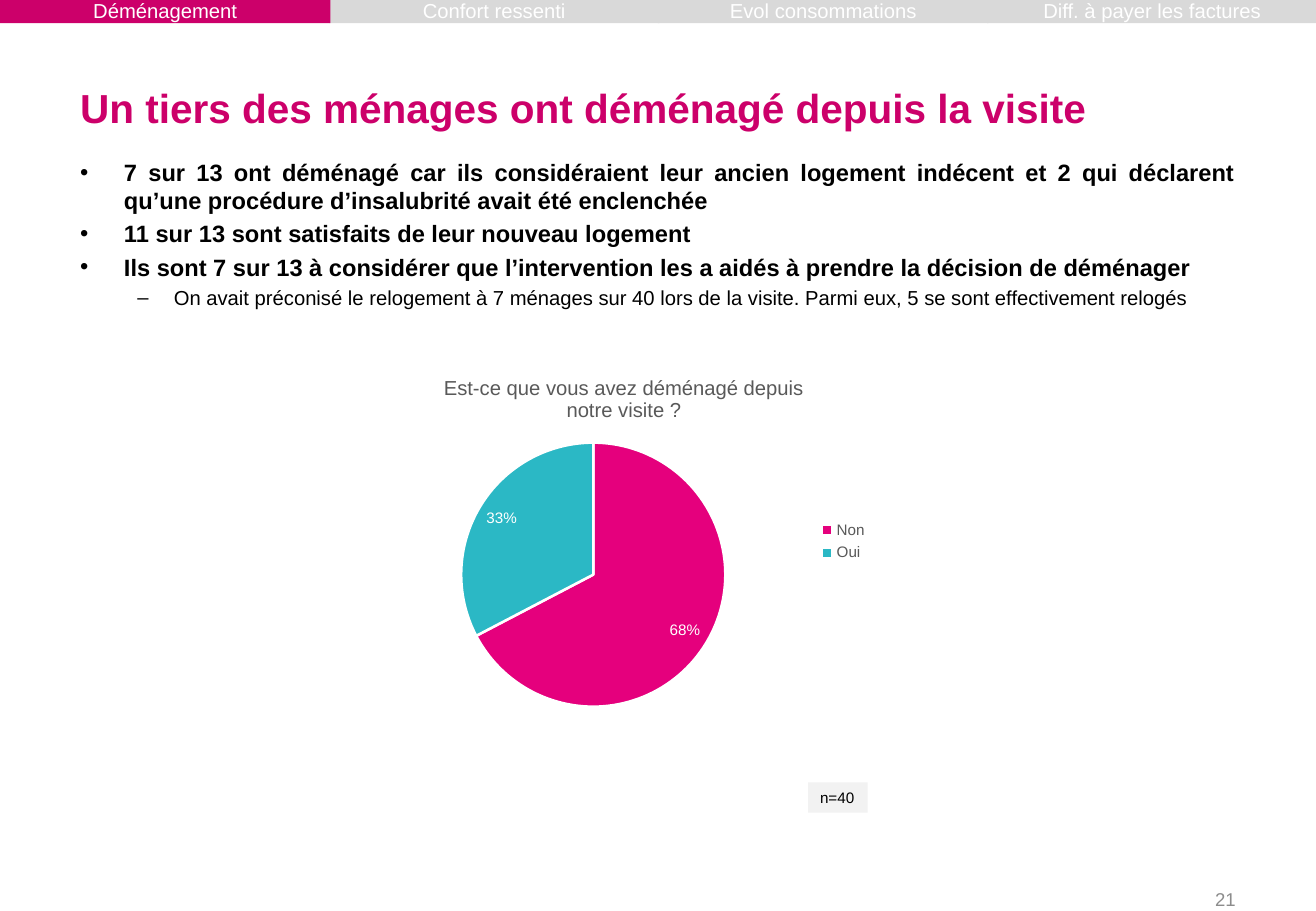
from dataclasses import dataclass

from lxml import etree
from pptx import Presentation
from pptx import util as u
from pptx.chart.chart import Chart
from pptx.chart.data import CategoryChartData
from pptx.dml.color import RGBColor
from pptx.enum import chart as charts
from pptx.enum import shapes, text
from pptx.oxml import ns
from pptx.slide import Slide

FONT = "Arial"
MAGENTA, GREY, WHITE, BLACK = "CC006A", "D9D9D9", "FFFFFF", "000000"
SLIDE_WIDTH = 10.83
BODY_LEFT, BODY_WIDTH = 0.54, 9.75


@dataclass
class Tab:
    label: str
    color: str = GREY


@dataclass
class Bullet:
    text: str
    level: int = 0


@dataclass
class LevelStyle:
    size: float
    bold: bool
    margin: float
    indent: float


@dataclass
class Answer:
    label: str
    percent: int
    color: str


TABS = [
    Tab("Déménagement", MAGENTA),
    Tab("Confort ressenti"),
    Tab("Evol consommations"),
    Tab("Diff. à payer les factures"),
]
BULLETS = [
    Bullet("7 sur 13 ont déménagé car ils considéraient leur ancien logement indécent "
           "et 2 qui déclarent qu’une procédure d’insalubrité avait été enclenchée"),
    Bullet("11 sur 13 sont satisfaits de leur nouveau logement"),
    Bullet("Ils sont 7 sur 13 à considérer que l’intervention les a aidés "
           "à prendre la décision de déménager"),
    Bullet("On avait préconisé le relogement à 7 ménages sur 40 lors de la visite. "
           "Parmi eux, 5 se sont effectivement relogés", 1),
]
LEVELS = [LevelStyle(14, True, 0.36, -0.36), LevelStyle(12, False, 0.77, -0.3)]
ANSWERS = [Answer("Non", 68, "E5007D"), Answer("Oui", 33, "2BB8C5")]


def paint(target, color: str) -> None:
    """Give a fill or a line one solid colour."""
    target.solid()
    target.fore_color.rgb = RGBColor.from_string(color)


def style_font(font, size: float, color: str, bold: bool = False) -> None:
    font.name = FONT
    font.size = u.Pt(size)
    font.bold = bold
    font.color.rgb = RGBColor.from_string(color)


def place(shape, left: float, top: float, width: float, height: float) -> None:
    shape.left, shape.top = u.Inches(left), u.Inches(top)
    shape.width, shape.height = u.Inches(width), u.Inches(height)


def set_frame(frame, anchor) -> None:
    """Apply the margins shared by the title, body and slide number."""
    frame.word_wrap = True
    frame.auto_size = text.MSO_AUTO_SIZE.NONE
    frame.vertical_anchor = anchor
    frame.margin_left = frame.margin_right = u.Inches(0.12)
    frame.margin_top = frame.margin_bottom = u.Inches(0.06)


def add_box(slide: Slide, label: str, color: str, left: float, top: float,
            width: float, height: float):
    """Add a filled rectangle without outline and return it."""
    shape = slide.shapes.add_shape(
        shapes.MSO_SHAPE.RECTANGLE, *map(u.Inches, (left, top, width, height)))
    shape.shadow.inherit = False
    paint(shape.fill, color)
    shape.line.fill.background()
    shape.text_frame.text = label
    return shape


def add_tabs(slide: Slide) -> None:
    pitch = SLIDE_WIDTH / len(TABS)
    for index, tab in reversed(list(enumerate(TABS))):
        shape = add_box(slide, tab.label, tab.color, index * pitch, -0.01, 2.72, 0.2)
        shape.text_frame.vertical_anchor = text.MSO_ANCHOR.MIDDLE
        paragraph = shape.text_frame.paragraphs[0]
        paragraph.alignment = text.PP_ALIGN.CENTER
        style_font(paragraph.font, 12, WHITE)


def fill_title(slide: Slide) -> None:
    title = slide.shapes.title
    place(title, BODY_LEFT, 0.2, BODY_WIDTH, 0.94)
    set_frame(title.text_frame, text.MSO_ANCHOR.BOTTOM)
    title.text_frame.text = "Un tiers des ménages ont déménagé depuis la visite"
    paragraph = title.text_frame.paragraphs[0]
    paragraph.alignment = text.PP_ALIGN.LEFT
    style_font(paragraph.font, 24, MAGENTA, bold=True)


def fill_body(slide: Slide) -> None:
    body = slide.placeholders[1]
    place(body, BODY_LEFT, 1.24, BODY_WIDTH, 1.44)
    frame = body.text_frame
    set_frame(frame, text.MSO_ANCHOR.TOP)
    frame.text = "\n".join(bullet.text for bullet in BULLETS)
    for bullet, paragraph in zip(BULLETS, frame.paragraphs):
        level = LEVELS[bullet.level]
        paragraph.level = bullet.level
        paragraph.alignment = text.PP_ALIGN.JUSTIFY
        properties = paragraph._p.get_or_add_pPr()
        properties.set("marL", str(u.Inches(level.margin)))
        properties.set("indent", str(u.Inches(level.indent)))
        style_font(paragraph.font, level.size, BLACK, level.bold)
    frame.paragraphs[0].space_before = u.Pt(0)


def set_plot_area(chart: Chart, **fractions: float) -> None:
    """Fix the inner plot area, in fractions of the chart's size."""
    plot_area = chart._chartSpace.chart.plotArea
    for layout in plot_area.findall(ns.qn("c:layout")):
        plot_area.remove(layout)
    layout = etree.Element(ns.qn("c:layout"))
    manual = etree.SubElement(layout, ns.qn("c:manualLayout"))
    settings = {"layoutTarget": "inner", "xMode": "edge", "yMode": "edge", **fractions}
    for name, value in settings.items():
        etree.SubElement(manual, ns.qn(f"c:{name}")).set("val", str(value))
    plot_area.insert(0, layout)


def add_pie(slide: Slide) -> None:
    data = CategoryChartData()
    data.categories = [answer.label for answer in ANSWERS]
    data.add_series("Series 1", [answer.percent for answer in ANSWERS])
    chart = slide.shapes.add_chart(
        charts.XL_CHART_TYPE.PIE, *map(u.Inches, (3.03, 2.95, 4.21, 3.02)), data).chart
    style_font(chart.font, 10, BLACK)

    title = chart.chart_title.text_frame
    title.text = "Est-ce que vous avez déménagé depuis notre visite ?"
    style_font(title.paragraphs[0].font, 12, "595959")
    set_plot_area(chart, x=0.18, y=0.23, w=0.52, h=0.72)

    chart.has_legend = True
    chart.legend.position = charts.XL_LEGEND_POSITION.RIGHT
    chart.legend.include_in_layout = False
    style_font(chart.legend.font, 9, "595959")

    plot = chart.plots[0]
    plot.vary_by_categories = True
    for index, answer in enumerate(ANSWERS):
        point = plot.series[0].points[index]
        paint(point.format.fill, answer.color)
        paint(point.format.line.fill, WHITE)
        point.format.line.width = u.Pt(1.5)
    plot.has_data_labels = True
    labels = plot.data_labels
    labels.show_value = True
    labels.number_format, labels.number_format_is_linked = '0"%"', False
    labels.position = charts.XL_LABEL_POSITION.INSIDE_END
    style_font(labels.font, 9, WHITE)


def add_sample_size(slide: Slide) -> None:
    frame = add_box(slide, "n=40", "F2F2F2", 6.65, 6.44, 0.49, 0.25).text_frame
    frame.word_wrap = False
    frame.vertical_anchor = text.MSO_ANCHOR.TOP
    frame.paragraphs[0].alignment = text.PP_ALIGN.LEFT
    style_font(frame.paragraphs[0].font, 9, BLACK)


def add_slide_number(slide: Slide) -> None:
    frame = slide.shapes.add_textbox(*map(u.Inches, (7.76, 7.25, 2.53, 0.3))).text_frame
    set_frame(frame, text.MSO_ANCHOR.MIDDLE)
    frame.text = "21"
    frame.paragraphs[0].alignment = text.PP_ALIGN.RIGHT
    style_font(frame.paragraphs[0].font, 11, "8C8C8C")


def main() -> None:
    presentation = Presentation()
    presentation.slide_width, presentation.slide_height = u.Inches(SLIDE_WIDTH), u.Inches(7.5)
    slide = presentation.slides.add_slide(presentation.slide_layouts[1])
    for draw in (add_slide_number, fill_title, fill_body, add_sample_size, add_tabs, add_pie):
        draw(slide)
    presentation.save("out.pptx")


if __name__ == "__main__":
    main()
